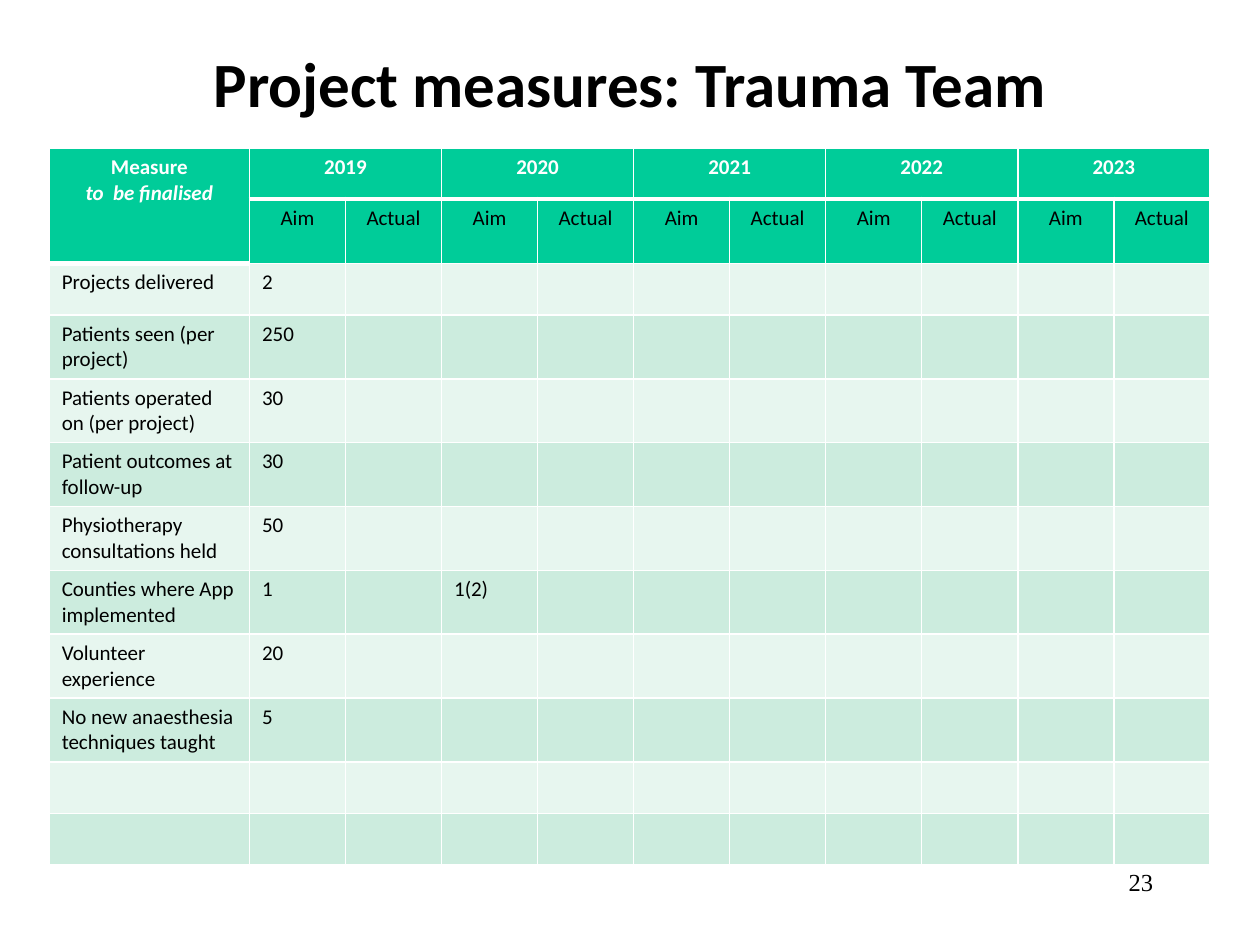
from lxml.etree import SubElement
from pptx import Presentation
from pptx.dml.color import RGBColor
from pptx.enum.text import MSO_ANCHOR, PP_ALIGN
from pptx.oxml.ns import qn
from pptx.util import Inches, Pt

TITLE = "Project measures: Trauma Team"
PAGE_NUMBER = "23"
YEARS = ["2019", "2020", "2021", "2022", "2023"]
SUBHEADS = ["Aim", "Actual"]
# Measure, then its Aim and Actual values year by year
MEASURES = [
    ["Projects delivered", "2"],
    ["Patients seen (per project)", "250"],
    ["Patients operated on (per project)", "30"],
    ["Patient outcomes at follow-up", "30"],
    ["Physiotherapy consultations held", "50"],
    ["Counties where App implemented", "1", "", "1(2)"],
    ["Volunteer experience", "20"],
    ["No new anaesthesia techniques taught", "5"],
    [],
    [],
]
BLACK, WHITE, GREEN = "000000", "FFFFFF", "00CC99"
BANDS = ["E7F6EF", "CCECDE"]
BODY = {"name": "Calibri", "size": Pt(12), "bold": False}
HEAD = {**BODY, "bold": True}


def rgb(color):
    return RGBColor.from_string(color)


def write(p, text, font, color=BLACK, align=PP_ALIGN.LEFT):
    p.alignment = align
    r = p.add_run()
    r.text = text
    for name, value in font.items():
        setattr(r.font, name, value)
    r.font.color.rgb = rgb(color)


def style_cell(cell, fill, bottom=1):
    """Draw white borders, with the given bottom width, and fill the cell."""
    tc_pr = cell._tc.get_or_add_tcPr()
    for side, width in (("L", 1), ("R", 1), ("T", 1), ("B", bottom)):
        ln = SubElement(tc_pr, qn(f"a:ln{side}"), w=str(Pt(width)))
        solid = SubElement(ln, qn("a:solidFill"))
        SubElement(solid, qn("a:srgbClr"), val=WHITE)
    cell.fill.solid()
    cell.fill.fore_color.rgb = rgb(fill)


def add_measures_table(s):
    span = len(SUBHEADS)
    n_rows, n_cols = 2 + len(MEASURES), 1 + span * len(YEARS)
    heights = [0.4, 0.51] + [0.41] * len(MEASURES)
    widths = [1.59] + [0.7625] * (n_cols - 1)
    table = s.shapes.add_table(n_rows, n_cols, Inches(0.39), Inches(1.18),
                               Inches(sum(widths)), Inches(sum(heights))).table
    for row, height in zip(table.rows, heights):
        row.height = Inches(height)
    for col, width in zip(table.columns, widths):
        col.width = Inches(width)

    for i in range(n_rows):
        fill = GREEN if i < 2 else BANDS[i % 2]
        for j in range(n_cols):
            thick = i == 0 or (i == 1 and j == 0)
            style_cell(table.cell(i, j), fill, bottom=3 if thick else 1)

    corner = table.cell(0, 0)
    corner.merge(table.cell(1, 0))
    tf = corner.text_frame
    write(tf.paragraphs[0], "Measure", HEAD, WHITE, PP_ALIGN.CENTER)
    write(tf.add_paragraph(), "to  be finalised", {**HEAD, "italic": True},
          WHITE, PP_ALIGN.CENTER)

    for k, year in enumerate(YEARS):
        first = 1 + k * span
        cell = table.cell(0, first)
        cell.merge(table.cell(0, first + span - 1))
        write(cell.text_frame.paragraphs[0], year, HEAD, WHITE, PP_ALIGN.CENTER)
        for j, label in enumerate(SUBHEADS, first):
            write(table.cell(1, j).text_frame.paragraphs[0], label, BODY,
                  align=PP_ALIGN.CENTER)

    for i, values in enumerate(MEASURES, 2):
        for j, value in enumerate(values):
            if value:
                write(table.cell(i, j).text_frame.paragraphs[0], value, BODY)


def main():
    prs = Presentation()
    prs.slide_width, prs.slide_height = Inches(10), Inches(7.5)
    s = prs.slides.add_slide(prs.slide_layouts[5])

    title = s.shapes.title
    title.left, title.top = Inches(0.75), Inches(0.2)
    title.width, title.height = Inches(8.5), Inches(0.91)
    title.text_frame.vertical_anchor = MSO_ANCHOR.MIDDLE
    write(title.text_frame.paragraphs[0], TITLE,
          {**HEAD, "size": Pt(36)}, align=PP_ALIGN.CENTER)

    add_measures_table(s)

    number = s.shapes.add_textbox(Inches(7.17), Inches(6.83),
                                  Inches(2.08), Inches(0.5))
    number.text_frame.word_wrap = True
    write(number.text_frame.paragraphs[0], PAGE_NUMBER,
          {"name": "Times New Roman", "size": Pt(14)}, align=PP_ALIGN.RIGHT)

    prs.save("out.pptx")


if __name__ == "__main__":
    main()
